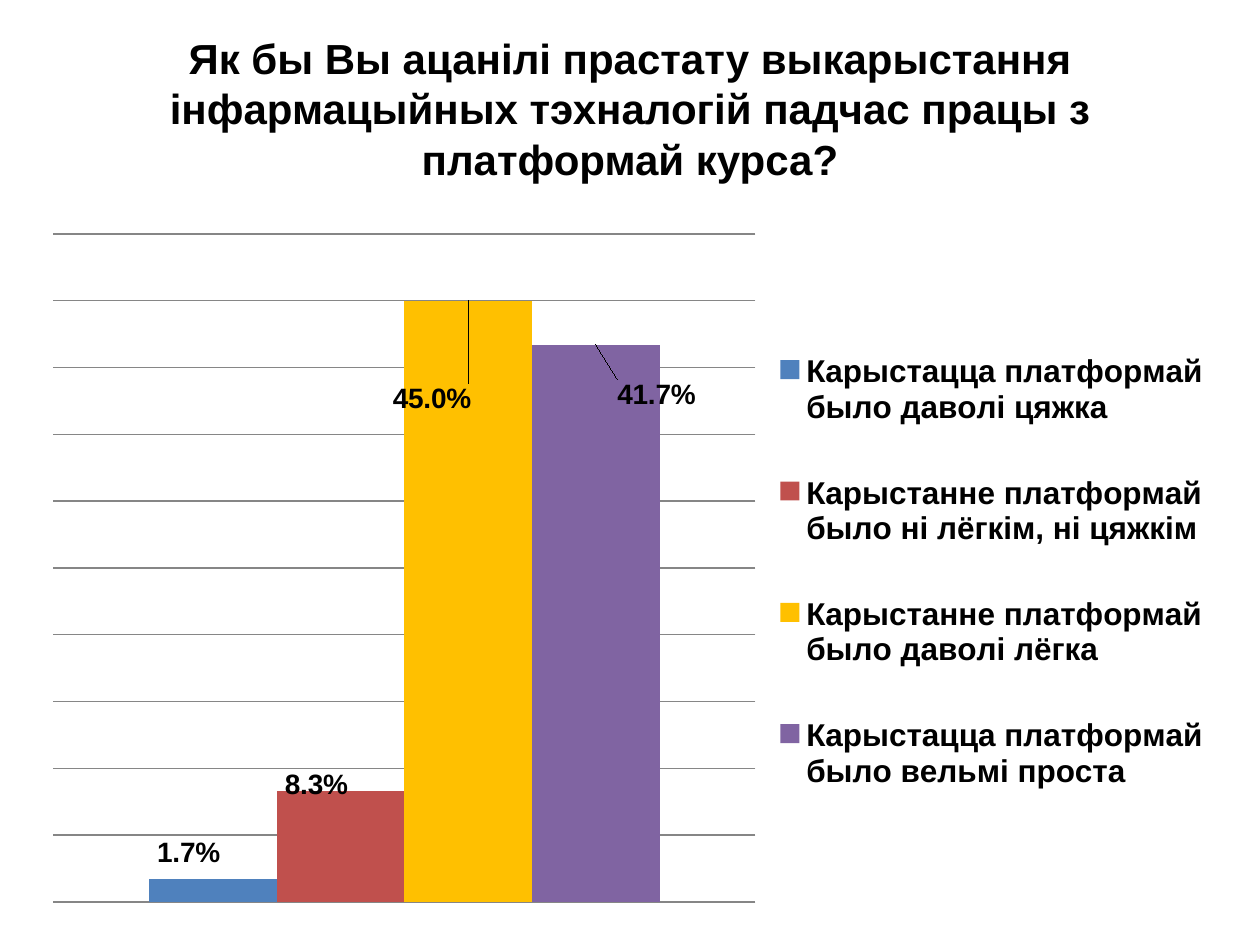
import lxml.etree
import pptx
import pptx.chart.data
import pptx.dml.color
import pptx.enum.chart
import pptx.enum.text
import pptx.oxml.ns
import pptx.util

EMU_PER_PX = 914400 // 126
FONT = "Arial"
PERCENT = "0.0%"
COLORS = {
    "text": "000000",
    "grid": "868686",
    "blue": "4F81BD",
    "red": "C0504D",
    "yellow": "FFC000",
    "purple": "8064A2",
}
TITLE = ("Як бы Вы ацанілі прастату выкарыстання інфармацыйных "
         "тэхналогій падчас працы з платформай курса?")
# Answer, share, colour, label shift as fractions of the chart
ANSWERS = [
    ("Карыстацца платформай было даволі цяжка", 0.017, "blue", (-0.02, -0.01)),
    ("Карыстанне платформай было ні лёгкім, ні цяжкім", 0.083, "red", (-0.02, 0.02)),
    ("Карыстанне платформай было даволі лёгка", 0.45, "yellow", (-0.03, 0.17)),
    ("Карыстацца платформай было вельмі проста", 0.417, "purple", (0.05, 0.1)),
]


def px(length):
    return pptx.util.Emu(length * EMU_PER_PX)


def rgb(name):
    return pptx.dml.color.RGBColor.from_string(COLORS[name])


def set_attributes(target, values):
    for name, value in values.items():
        setattr(target, name, value)


def format_font(font, size):
    set_attributes(font, {"name": FONT, "size": pptx.util.Pt(size), "bold": True})
    font.color.rgb = rgb("text")


def make_layout(**values):
    """Return a c:layout element holding a manual layout."""
    layout = lxml.etree.Element(pptx.oxml.ns.qn("c:layout"))
    manual = lxml.etree.SubElement(layout, pptx.oxml.ns.qn("c:manualLayout"))
    for name, value in values.items():
        child = lxml.etree.SubElement(manual, pptx.oxml.ns.qn(f"c:{name}"))
        child.set("val", str(value))
    return layout


def place_in_chart(parent, index, **values):
    """Put a manual layout at the given child index, replacing any other."""
    for old in parent.findall(pptx.oxml.ns.qn("c:layout")):
        parent.remove(old)
    parent.insert(index, make_layout(**values))


def fill_title(slide):
    title = slide.shapes.title
    set_attributes(title, {"left": px(63), "top": px(38),
                           "width": px(1134), "height": px(140)})
    frame = title.text_frame
    set_attributes(frame, {"word_wrap": True,
                           "vertical_anchor": pptx.enum.text.MSO_ANCHOR.MIDDLE})
    para = frame.paragraphs[0]
    para.alignment = pptx.enum.text.PP_ALIGN.CENTER
    span = para.add_run()
    span.text = TITLE
    format_font(span.font, 24)


def format_axes(chart):
    chart.category_axis.visible = False
    axis = chart.value_axis
    set_attributes(axis, {"visible": False, "minimum_scale": 0,
                          "maximum_scale": 0.5, "major_unit": 0.05,
                          "has_major_gridlines": True})
    line = axis.major_gridlines.format.line
    line.width = pptx.util.Pt(0.75)
    line.color.rgb = rgb("grid")


def format_legend(chart):
    chart.has_legend = True
    legend = chart.legend
    set_attributes(legend, {"position": pptx.enum.chart.XL_LEGEND_POSITION.RIGHT,
                            "include_in_layout": False})
    format_font(legend.font, 18)
    place_in_chart(legend._element, 1, xMode="edge", yMode="edge",
                   x=0.6, y=0.12, w=0.39, h=0.77)


def format_series(series, color, shift):
    series.format.fill.solid()
    series.format.fill.fore_color.rgb = rgb(color)
    labels = series.data_labels
    set_attributes(labels, {"show_value": True, "number_format": PERCENT,
                            "number_format_is_linked": False})
    format_font(labels.font, 16)

    label = series.points[0].data_label
    label.position = pptx.enum.chart.XL_LABEL_POSITION.OUTSIDE_END
    format_font(label.font, 16)
    element = labels._element.find(pptx.oxml.ns.qn("c:dLbl"))
    place_in_chart(element, 1, x=shift[0], y=shift[1])
    number_format = lxml.etree.Element(pptx.oxml.ns.qn("c:numFmt"))
    number_format.set("formatCode", PERCENT)
    number_format.set("sourceLinked", "0")
    element.insert(2, number_format)


def add_answer_chart(slide):
    data = pptx.chart.data.CategoryChartData(number_format=PERCENT)
    data.categories = ["1"]
    for answer, share, _, _ in ANSWERS:
        data.add_series(answer, [share])
    chart = slide.shapes.add_chart(
        pptx.enum.chart.XL_CHART_TYPE.COLUMN_CLUSTERED,
        px(29), px(220), px(1211), px(696), data).chart
    chart.has_title = False
    set_attributes(chart.font, {"name": "Calibri", "size": pptx.util.Pt(10)})
    chart.font.color.rgb = rgb("text")
    plot = chart.plots[0]
    set_attributes(plot, {"gap_width": 150, "overlap": 0,
                          "vary_by_categories": False})
    format_axes(chart)
    format_legend(chart)
    for series, (_, _, color, shift) in zip(plot.series, ANSWERS):
        format_series(series, color, shift)
    plot_area = chart._chartSpace.chart.plotArea
    place_in_chart(plot_area, 0, layoutTarget="inner", xMode="edge",
                   yMode="edge", x=0.02, y=0.02, w=0.58, h=0.96)


def main():
    deck = pptx.Presentation()
    set_attributes(deck, {"slide_width": px(1260), "slide_height": px(945)})
    slide = deck.slides.add_slide(deck.slide_layouts.get_by_name("Title Only"))
    fill_title(slide)
    add_answer_chart(slide)
    deck.save("out.pptx")


if __name__ == "__main__":
    main()
